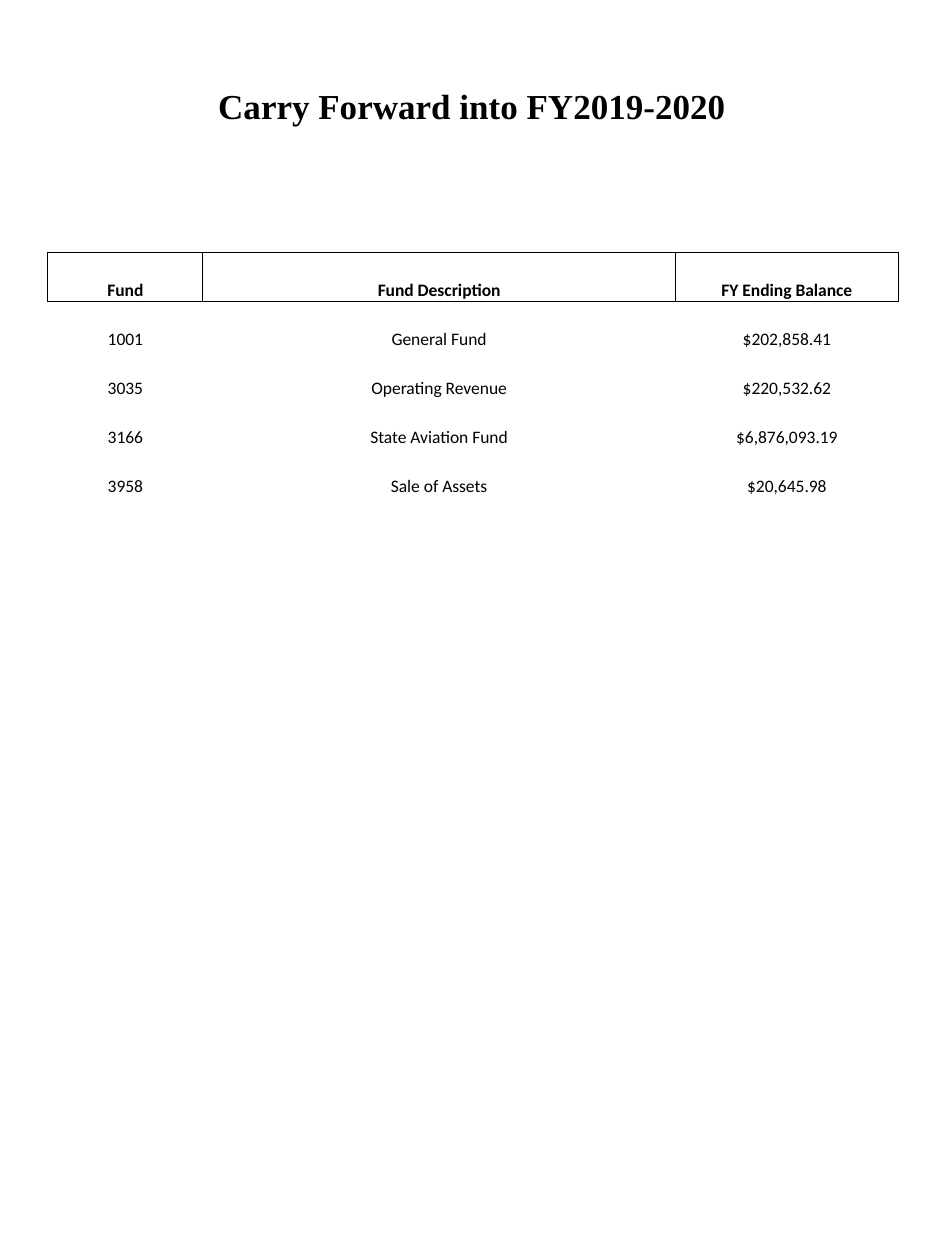
import pptx
import pptx.dml.color
import pptx.enum.text
import pptx.oxml
import pptx.oxml.ns
import pptx.util

Inches = pptx.util.Inches
Pt = pptx.util.Pt
ANCHOR = pptx.enum.text.MSO_ANCHOR

# Content
TITLE = "Carry Forward into FY2019-2020"
ROWS = [
    ("Fund", "Fund Description", "FY Ending Balance"),
    ("1001", "General Fund", "$202,858.41"),
    ("3035", "Operating Revenue", "$220,532.62"),
    ("3166", "State Aviation Fund", "$6,876,093.19"),
    ("3958", "Sale of Assets", "$20,645.98"),
    ("", "", ""),
]

# Format
COLORS = {"ink": "000000"}
TITLE_FONT = {"name": "Times New Roman", "size": Pt(20), "bold": True}
HEADER_FONT = {"name": "Calibri", "size": Pt(10), "bold": True}
BODY_FONT = {**HEADER_FONT, "bold": False}
CELL_FORMAT = {
    "margin_left": Inches(0.01),
    "margin_right": Inches(0.01),
    "margin_top": Inches(0.01),
    "margin_bottom": 0,
    "vertical_anchor": ANCHOR.BOTTOM,
}
COLUMN_WIDTHS = [1.23, 3.75, 1.77]
ROW_HEIGHT = 0.39
BORDER_WIDTH = Pt(0.5)


def apply(target, values):
    for name, value in values.items():
        setattr(target, name, value)


def write(frame, text, font):
    para = frame.paragraphs[0]
    para.alignment = pptx.enum.text.PP_ALIGN.CENTER
    target = para.font
    if text:
        span = para.add_run()
        span.text = text
        target = span.font
    apply(target, font)
    target.color.rgb = pptx.dml.color.RGBColor.from_string(COLORS["ink"])


def set_borders(cell, drawn_sides):
    properties = cell._tc.get_or_add_tcPr()
    for position, side in enumerate("LRTB"):
        paint = "<a:noFill/>"
        if side in drawn_sides:
            paint = f'<a:solidFill><a:srgbClr val="{COLORS["ink"]}"/></a:solidFill>'
        line = pptx.oxml.parse_xml(
            f'<a:ln{side} {pptx.oxml.ns.nsdecls("a")} w="{BORDER_WIDTH}">{paint}</a:ln{side}>'
        )
        properties.insert(position, line)


deck = pptx.Presentation()
deck.slide_width, deck.slide_height = Inches(7.5), Inches(10)
page = deck.slides.add_slide(deck.slide_layouts[6])

# Title
box = page.shapes.add_textbox(Inches(0.37), 0, Inches(6.75), Inches(1.67))
apply(box.text_frame, {"word_wrap": True, "vertical_anchor": ANCHOR.MIDDLE})
write(box.text_frame, TITLE, TITLE_FONT)

# Fund balance table
table = page.shapes.add_table(
    len(ROWS), len(COLUMN_WIDTHS), Inches(0.38), Inches(2),
    Inches(sum(COLUMN_WIDTHS)), Inches(ROW_HEIGHT * len(ROWS)),
).table
apply(table, {"first_row": False, "horz_banding": False})
for column, width in zip(table.columns, COLUMN_WIDTHS):
    column.width = Inches(width)
for row in table.rows:
    row.height = Inches(ROW_HEIGHT)

for row_index, texts in enumerate(ROWS):
    for column_index, text in enumerate(texts):
        cell = table.cell(row_index, column_index)
        apply(cell, CELL_FORMAT)
        cell.fill.background()
        set_borders(cell, {0: "LRTB", 1: "T"}.get(row_index, ""))
        write(cell.text_frame, text, BODY_FONT if row_index else HEADER_FONT)

deck.save("out.pptx")
